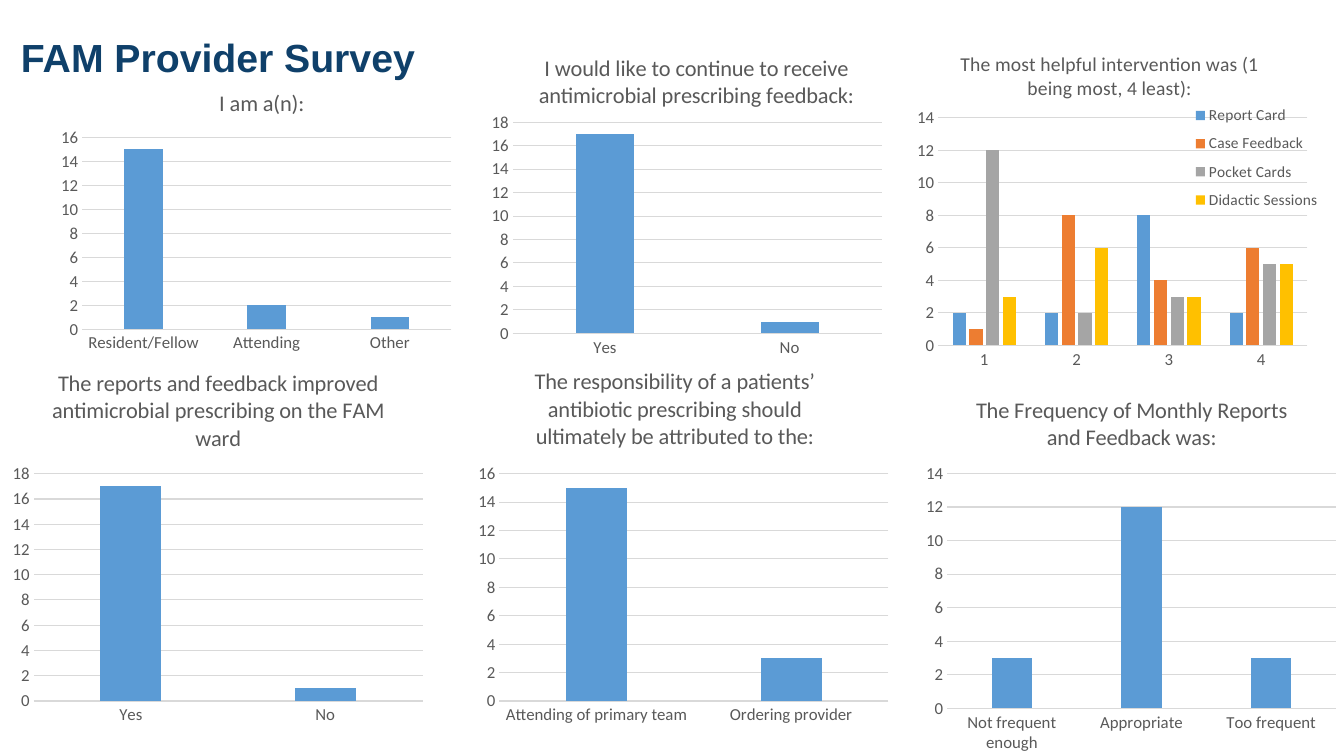
from lxml.etree import SubElement
from pptx import Presentation
from pptx.chart.data import CategoryChartData
from pptx.dml.color import RGBColor
from pptx.enum.chart import XL_CHART_TYPE, XL_LEGEND_POSITION, XL_TICK_MARK
from pptx.enum.text import MSO_ANCHOR
from pptx.oxml.ns import qn
from pptx.util import Inches, Pt

COLORS = {
    "heading": "0F406A", "label": "595959", "grid": "D9D9D9",
    "series": ["5B9BD5", "ED7D31", "A5A5A5", "FFC000"],
}

HEADING = "FAM Provider Survey"
CHART_WIDTH = 4.23
LEGEND_LAYOUT = (0.69, 0.18, 0.31, 0.35)

# Layouts are fractions of the chart: x, y and, for plots, width, height
SURVEY_CHARTS = [
    {"title": "The Frequency of Monthly Reports and Feedback was:",
     "left": 9.11, "top": 3.75, "height": 3.79, "plot": (0.067, 0.25, 0.912, 0.615),
     "categories": ["Not frequent enough", "Appropriate", "Too frequent"],
     "series": {"Series 1": [3, 12, 3]}},
    {"title": "The responsibility of a patients’ antibiotic prescribing should "
              "ultimately be attributed to the:",
     "left": 4.67, "top": 3.48, "height": 3.79, "plot": (0.067, 0.322, 0.912, 0.595),
     "title_at": (0.14, 0.03),
     "categories": ["Attending of primary team", "Ordering provider"],
     "series": {"Series 1": [15, 3]}},
    {"title": "I would like to continue to receive antimicrobial prescribing feedback:",
     "left": 4.67, "top": 0.22, "height": 3.45, "plot": (0.098, 0.288, 0.866, 0.607),
     "title_at": (0.15, 0.077),
     "categories": ["Yes", "No"],
     "series": {"Series 1": [17, 1]}},
    {"title": "The reports and feedback improved antimicrobial prescribing on the FAM ward",
     "left": 0.05, "top": 3.48, "height": 3.79, "plot": (0.067, 0.322, 0.912, 0.595),
     "categories": ["Yes", "No"],
     "series": {"Series 1": [17, 1]}},
    {"title": "The most helpful intervention was (1 being most, 4 least):",
     "left": 8.89, "top": 0.34, "height": 3.45, "plot": (0.098, 0.24, 0.866, 0.655),
     "title_size": 14,
     "categories": ["1", "2", "3", "4"],
     "series": {"Report Card": [2, 2, 8, 2], "Case Feedback": [1, 8, 4, 6],
                "Pocket Cards": [12, 2, 3, 5], "Didactic Sessions": [3, 6, 3, 5]}},
    {"title": "I am a(n):",
     "left": 0.4, "top": 0.63, "height": 2.95, "plot": (0.098, 0.249, 0.866, 0.645),
     "title_at": (0.41, 0.07),
     "categories": ["Resident/Fellow", "Attending", "Other"],
     "series": {"Series 1": [15, 2, 1]}},
]


def format_font(font, size, color=COLORS["label"], name="Calibri", bold=False):
    font.size, font.name, font.bold = Pt(size), name, bold
    font.color.rgb = RGBColor.from_string(color)


def write_text(text_frame, text, **font_format):
    paragraph = text_frame.paragraphs[0]
    run = paragraph.add_run()
    run.text = text
    format_font(run.font, **font_format)
    return paragraph


def set_layout(element, position, index, inner=False):
    """Place a chart part by fractions of the chart's size."""
    for old_layout in element.findall(qn("c:layout")):
        element.remove(old_layout)
    layout = SubElement(element, qn("c:layout"))
    element.insert(index, layout)
    manual = SubElement(layout, qn("c:manualLayout"))
    settings = [("layoutTarget", "inner")] if inner else []
    settings += [("xMode", "edge"), ("yMode", "edge")]
    settings += zip("xywh", position)
    for tag, value in settings:
        SubElement(manual, qn(f"c:{tag}")).set("val", str(value))


def set_line(line, color=COLORS["grid"]):
    line.width = Pt(0.75)
    line.color.rgb = RGBColor.from_string(color)


def add_survey_chart(slide, survey):
    data = CategoryChartData()
    data.categories = survey["categories"]
    for name, values in survey["series"].items():
        data.add_series(name, values)
    chart = slide.shapes.add_chart(
        XL_CHART_TYPE.COLUMN_CLUSTERED, Inches(survey["left"]), Inches(survey["top"]),
        Inches(CHART_WIDTH), Inches(survey["height"]), data).chart
    format_font(chart.font, 10, "000000")

    # Title
    write_text(chart.chart_title.text_frame, survey["title"],
               size=survey.get("title_size", 16))
    chart.chart_title.include_in_layout = False
    if "title_at" in survey:
        set_layout(chart.chart_title._element, survey["title_at"], 1)

    # Axes
    for axis in (chart.category_axis, chart.value_axis):
        axis.major_tick_mark = axis.minor_tick_mark = XL_TICK_MARK.NONE
        format_font(axis.tick_labels.font, 12)
    set_line(chart.category_axis.format.line)
    value_axis = chart.value_axis
    value_axis.format.line.fill.background()
    set_line(value_axis.major_gridlines.format.line)
    highest = max(max(values) for values in survey["series"].values())
    value_axis.minimum_scale, value_axis.major_unit = 0, 2
    value_axis.maximum_scale = (highest // 2 + 1) * 2

    # Columns
    plot = chart.plots[0]
    plot.gap_width, plot.overlap, plot.vary_by_categories = 219, -27, False
    for series, color in zip(plot.series, COLORS["series"]):
        series.format.fill.solid()
        series.format.fill.fore_color.rgb = RGBColor.from_string(color)
    plot_area = chart._chartSpace.find(f".//{qn('c:plotArea')}")
    set_layout(plot_area, survey["plot"], 0, inner=True)

    # Legend
    chart.has_legend = len(survey["series"]) > 1
    if chart.has_legend:
        chart.legend.position = XL_LEGEND_POSITION.RIGHT
        chart.legend.include_in_layout = True
        format_font(chart.legend.font, 11)
        set_layout(chart.legend._element, LEGEND_LAYOUT, 1)


def main():
    presentation = Presentation()
    presentation.slide_width, presentation.slide_height = Inches(13.33), Inches(7.5)
    slide = presentation.slides.add_slide(presentation.slide_layouts[6])

    for survey in SURVEY_CHARTS:
        add_survey_chart(slide, survey)

    # Heading
    box = slide.shapes.add_textbox(Inches(0.11), Inches(-0.13), Inches(4.94), Inches(1.45))
    box.text_frame.word_wrap = True
    box.text_frame.vertical_anchor = MSO_ANCHOR.MIDDLE
    paragraph = write_text(box.text_frame, HEADING, size=28, name="Arial",
                           color=COLORS["heading"], bold=True)
    paragraph.line_spacing = 0.9

    presentation.save("out.pptx")


if __name__ == "__main__":
    main()
